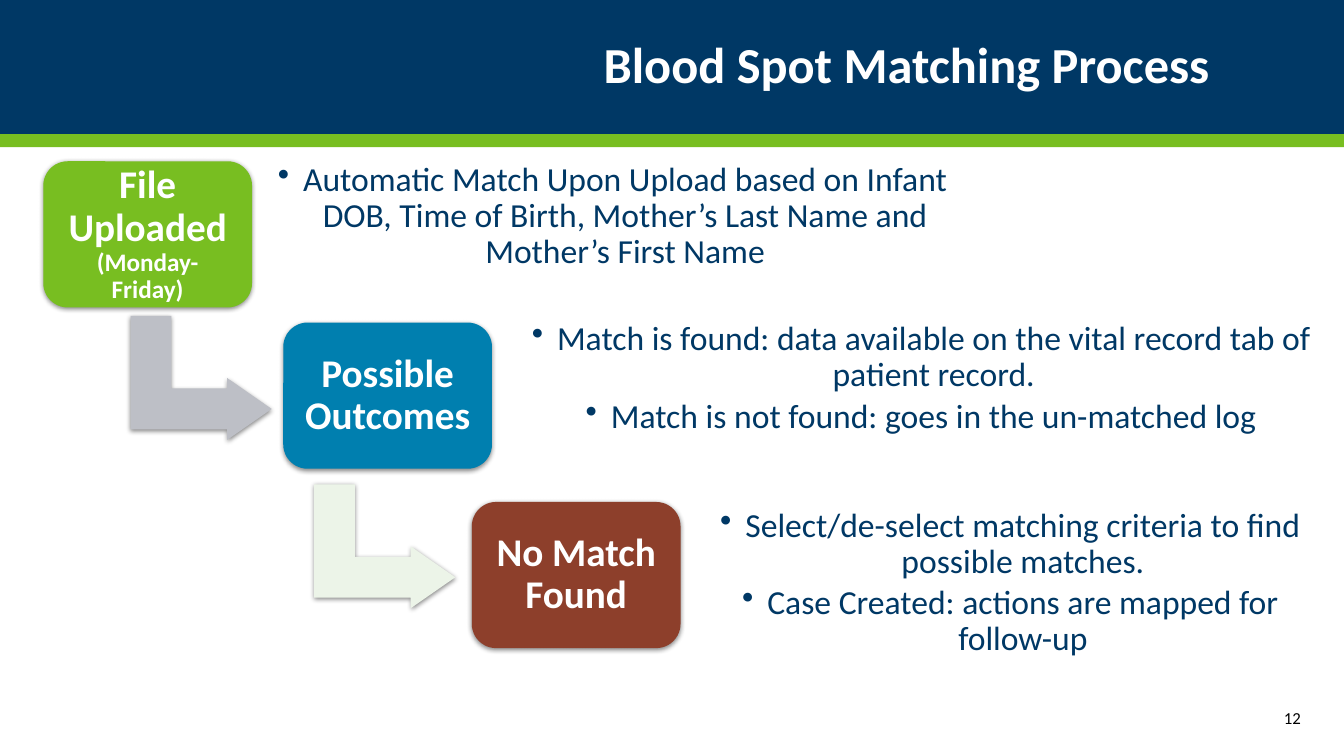
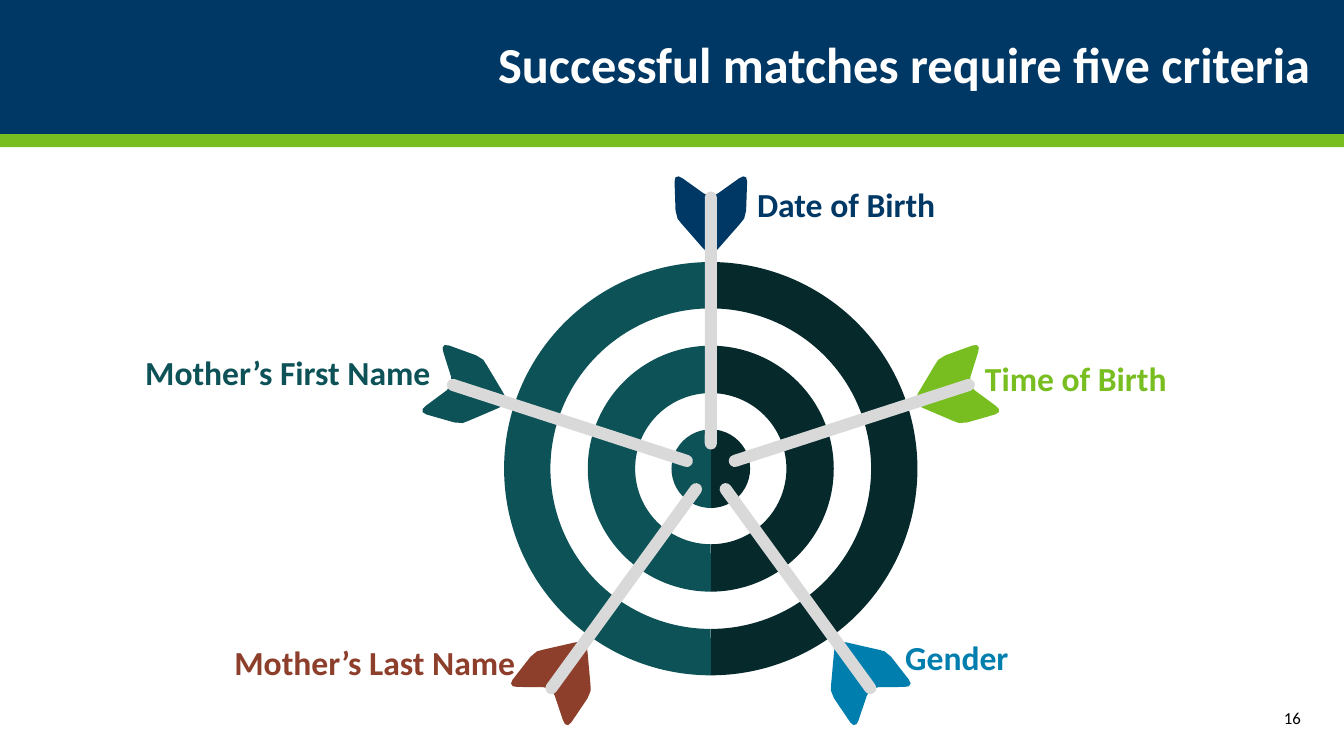
"""Build two slides on matching blood spot records: a step flow and a target."""
from math import cos, radians, sin

from lxml.etree import SubElement
from pptx import Presentation
from pptx.dml.color import RGBColor
from pptx.enum.shapes import MSO_SHAPE as Kind
from pptx.enum.text import MSO_ANCHOR as Anchor, PP_ALIGN as Align
from pptx.oxml.ns import qn
from pptx.util import Inches, Pt

NAVY = RGBColor(0x00, 0x38, 0x65)
GREEN = RGBColor(0x78, 0xBE, 0x21)
BLUE = RGBColor(0x00, 0x7F, 0xAF)
RUST = RGBColor(0x8D, 0x3F, 0x2B)
TEAL = RGBColor(0x0D, 0x52, 0x57)
DARK = RGBColor(0x06, 0x29, 0x2C)
GRAY = RGBColor(0xBD, 0xBF, 0xC6)
MINT = RGBColor(0xEC, 0xF4, 0xE8)
SILVER = RGBColor(0xD9, 0xD9, 0xD9)
WHITE = RGBColor(0xFF, 0xFF, 0xFF)
BLACK = RGBColor(0x00, 0x00, 0x00)


def paint(shape, color, raised=False):
    shape.fill.solid()
    shape.fill.fore_color.rgb = color
    shape.line.fill.background()
    shape.shadow.inherit = False
    if raised:
        effects = shape.element.spPr.find(qn("a:effectLst"))
        shade = SubElement(effects, qn("a:outerShdw"), blurRad=str(Pt(3.5)),
                           dist=str(Pt(1.1)), dir="5400000", rotWithShape="0")
        tone = SubElement(shade, qn("a:srgbClr"), val="000000")
        SubElement(tone, qn("a:alpha"), val="45000")


def style(par, size, color, bold=False, align=Align.LEFT):
    par.alignment = align
    for run in par.runs:
        run.font.name = "Calibri"
        run.font.size = Pt(size)
        run.font.bold = bold
        run.font.color.rgb = color


prs = Presentation()
prs.slide_width, prs.slide_height = Inches(13.33), Inches(7.5)
layout = prs.slide_layouts[5]
flow, goal = [prs.slides.add_slide(layout) for _ in range(2)]

for spot, (top, high, color) in enumerate([(0, 1.33, NAVY), (1.33, 0.13, GREEN)]):
    band = flow.shapes.add_shape(Kind.RECTANGLE, 0, Inches(top), prs.slide_width, Inches(high))
    paint(band, color)
    layout.shapes.element.insert(2 + spot, band.element)

for slide, head, page, inset in [
    (flow, "Blood Spot Matching Process", "12", 1),
    (goal, "Successful matches require five criteria", "16", 0),
]:
    title = slide.shapes.title
    title.left, title.top, title.width, title.height = 0, 0, Inches(13), Inches(1.33)
    frame = title.text_frame
    frame.text = head
    frame.vertical_anchor = Anchor.MIDDLE
    frame.margin_left, frame.margin_right = 0, Inches(inset)
    frame.paragraphs[0].line_spacing = 0.9
    style(frame.paragraphs[0], 36, WHITE, True, Align.RIGHT)
    frame = slide.shapes.add_textbox(Inches(11.4), Inches(6.92), Inches(1.6), Inches(0.4)).text_frame
    frame.text = page
    frame.word_wrap = True
    frame.vertical_anchor = Anchor.MIDDLE
    style(frame.paragraphs[0], 12, BLACK, False, Align.RIGHT)

for left, top, color in [(1.38, 3.05, GRAY), (3.2, 4.72, MINT)]:
    arrow = flow.shapes.add_shape(Kind.BENT_UP_ARROW, Inches(left), Inches(top),
                                  Inches(1.23), Inches(1.4))
    arrow.rotation = 90
    for spot, ratio in enumerate([0.33, 0.25, 0.36]):
        arrow.adjustments[spot] = ratio
    paint(arrow, color, True)

steps = [
    (0.43, 1.6, GREEN, [("File Uploaded ", 28), ("(Monday- Friday)", 18)]),
    (2.81, 3.2, BLUE, [("Possible Outcomes", 28)]),
    (4.68, 4.98, RUST, [("No Match Found", 28)]),
]
for left, top, color, parts in steps:
    box = flow.shapes.add_shape(Kind.ROUNDED_RECTANGLE, Inches(left), Inches(top),
                                Inches(2.07), Inches(1.45))
    paint(box, color, True)
    frame = box.text_frame
    frame.word_wrap = True
    frame.vertical_anchor = Anchor.MIDDLE
    frame.margin_left = frame.margin_right = Inches(0.12)
    frame.margin_top = frame.margin_bottom = Inches(0.12)
    par = frame.paragraphs[0]
    par.line_spacing = 0.9
    for words, _ in parts:
        par.add_run().text = words
    style(par, 28, WHITE, True, Align.CENTER)
    for run, (_, size) in zip(par.runs, parts):
        run.font.size = Pt(size)

notes = [
    (2.58, 1.69, 6.99, 0.92, [
        "Automatic Match Upon Upload based on Infant DOB, Time of Birth, "
        "Mother’s Last Name and Mother’s First Name"]),
    (5.09, 3.06, 8.09, 1.39, [
        "Match is found: data available on the vital record tab of patient record.",
        "Match is not found: goes in the un-matched log"]),
    (6.98, 4.8, 6.08, 1.97, [
        "Select/de-select matching criteria to find possible matches.",
        "Case Created: actions are mapped for follow-up"]),
]
for left, top, wide, high, lines in notes:
    frame = flow.shapes.add_textbox(Inches(left), Inches(top), Inches(wide), Inches(high)).text_frame
    frame.word_wrap = True
    frame.vertical_anchor = Anchor.MIDDLE
    frame.margin_top = frame.margin_bottom = Inches(0.1)
    frame.text = "\n".join(lines)
    for par in frame.paragraphs:
        props = par._p.get_or_add_pPr()
        props.set("marL", str(Inches(0.25)))
        props.set("indent", str(-Inches(0.25)))
        SubElement(props, qn("a:buChar"), char="•")
        par.line_spacing = 0.9
        par.space_after = Pt(3.6)
        style(par, 24, NAVY, False, Align.CENTER)

MID_X, MID_Y = 7.05, 4.65
disc = goal.shapes.add_shape(Kind.OVAL, Inches(MID_X - 1.8), Inches(MID_Y - 1.8),
                             Inches(3.6), Inches(3.6))
paint(disc, WHITE)
for color, start, end in [(DARK, 270, 90), (TEAL, 90, 270)]:
    for kind, radius, thick in [(Kind.BLOCK_ARC, 2.05, 0.46), (Kind.BLOCK_ARC, 1.22, 0.47),
                                (Kind.CHORD, 0.39, 0)]:
        ring = goal.shapes.add_shape(kind, Inches(MID_X - radius), Inches(MID_Y - radius),
                                     Inches(2 * radius), Inches(2 * radius))
        ring.adjustments[0], ring.adjustments[1] = start * 0.6, end * 0.6
        if thick:
            ring.adjustments[2] = thick / (2 * radius)
        paint(ring, color)

half = [(0, 2.14), (0.04, 2.15), (0.08, 2.19), (0.29, 2.43), (0.33, 2.48), (0.35, 2.56),
        (0.36, 2.85), (0.35, 2.89), (0.32, 2.9), (0.28, 2.88), (0.07, 2.73), (0.04, 2.72),
        (0, 2.71)]
vane = half + [(-x, y) for x, y in half[-2:0:-1]]
darts = [
    ("Date of Birth", NAVY, 7.41, 1.77, 1.99, Align.LEFT),
    ("Time of Birth", GREEN, 9.67, 3.5, 2.02, Align.LEFT),
    ("Gender", BLUE, 8.88, 6.27, 1.24, Align.LEFT),
    ("Mother’s Last Name", RUST, 2.19, 6.32, 3.02, Align.RIGHT),
    ("Mother’s First Name", TEAL, 1.31, 3.44, 3.06, Align.RIGHT),
]
for turn, (name, color, left, top, wide, align) in enumerate(darts):
    angle = turn * 360 / len(darts)
    across, along = cos(radians(angle)), sin(radians(angle))
    points = [(Inches(MID_X + x * across + y * along), Inches(MID_Y + x * along - y * across))
              for x, y in vane]
    pen = goal.shapes.build_freeform(*points[0])
    pen.add_line_segments(points[1:])
    paint(pen.convert_to_shape(), color)
    shaft = goal.shapes.add_shape(
        Kind.ROUNDED_RECTANGLE, Inches(MID_X + 1.47 * along - 0.06),
        Inches(MID_Y - 1.47 * across - 1.28), Inches(0.12), Inches(2.56))
    shaft.adjustments[0] = 0.5
    shaft.rotation = angle
    paint(shaft, SILVER)
    frame = goal.shapes.add_textbox(Inches(left), Inches(top), Inches(wide), Inches(0.5)).text_frame
    frame.text = name
    frame.word_wrap = False
    frame.vertical_anchor = Anchor.MIDDLE
    style(frame.paragraphs[0], 24, color, True, align)

prs.save("out.pptx")
